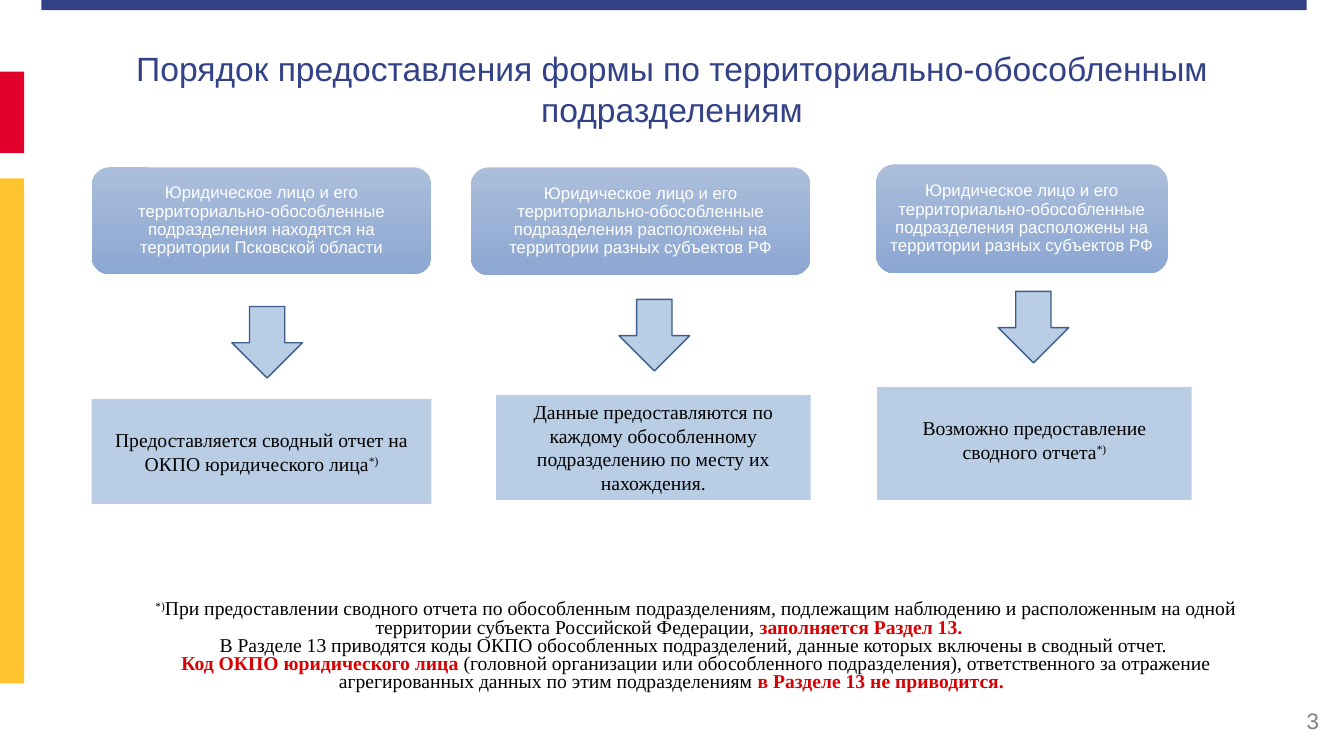
"""Builds the slide on how separate divisions submit the form."""
from dataclasses import dataclass

from pptx import Presentation
from pptx.dml.color import RGBColor
from pptx.enum.shapes import MSO_SHAPE
from pptx.enum.text import MSO_ANCHOR, PP_ALIGN
from pptx.util import Inches, Pt

RECT, ROUND, DOWN = MSO_SHAPE.RECTANGLE, MSO_SHAPE.ROUNDED_RECTANGLE, MSO_SHAPE.DOWN_ARROW
TOP, MIDDLE = MSO_ANCHOR.TOP, MSO_ANCHOR.MIDDLE
CENTER, RIGHT = PP_ALIGN.CENTER, PP_ALIGN.RIGHT


@dataclass(frozen=True)
class Theme:
    """Colours, fonts and type sizes."""
    navy: str = "334286"
    red: str = "E1002B"
    gold: str = "FFC32E"
    pale: str = "B9CDE5"
    edge: str = "3A5F8C"
    light: str = "ABBEDB"
    deep: str = "8CA7D2"
    alert: str = "D70103"
    gray: str = "808080"
    black: str = "000000"
    white: str = "FFFFFF"
    sans: str = "Arial"
    serif: str = "Times New Roman"
    title: int = 24
    page: int = 16
    body: int = 14
    card: int = 12


T = Theme()
TITLE = "Порядок предоставления формы по территориально-обособленным подразделениям"
PAGE = "3"
SPREAD = ("Юридическое лицо и его территориально-обособленные подразделения "
          "расположены на территории разных субъектов РФ")
MARK = ("*)", "mark")
BARS = [
    ((0.41, 0, 12.55, 0.1), T.navy),
    ((0, 0.71, 0.24, 0.81), T.red),
    ((0, 1.77, 0.24, 5.01), T.gold),
]
FLOWS = [
    {"case": "Юридическое лицо и его территориально-обособленные подразделения "
             "находятся на территории Псковской области",
     "card": (0.91, 1.66, 3.37, 1.06), "arrow": (2.3, 3.04), "box": (0.91, 3.96, 3.37, 1.04),
     "rule": [("Предоставляется сводный отчет на ОКПО юридического лица", ""), MARK],
     "inset": 0.29},
    {"case": SPREAD,
     "card": (4.67, 1.66, 3.37, 1.07), "arrow": (6.14, 2.97), "box": (4.92, 3.92, 3.12, 1.04),
     "rule": [("Данные предоставляются по каждому обособленному подразделению "
               "по месту их нахождения.", "")],
     "inset": 0.05},
    {"case": SPREAD,
     "card": (8.69, 1.63, 2.89, 1.08), "arrow": (9.9, 2.89), "box": (8.7, 3.84, 3.12, 1.12),
     "rule": [("Возможно предоставление сводного отчета", ""), MARK],
     "inset": 0.29},
]
NOTES = [
    [MARK,
     ("При предоставлении сводного отчета по обособленным подразделениям, подлежащим "
      "наблюдению и расположенным на одной территории субъекта Российской Федерации, ", ""),
     ("заполняется Раздел 13. ", "alert")],
    [("В Разделе 13 приводятся коды ОКПО обособленных подразделений, данные которых "
      "включены в сводный отчет. ", "")],
    [("Код ОКПО юридического лица ", "alert"),
     ("(головной организации или обособленного подразделения), ответственного за отражение "
      "агрегированных данных по этим подразделениям ", ""),
     ("в Разделе 13 не приводится.", "alert")],
]


def rgb(code):
    return RGBColor.from_string(code)


def shape(slide, kind, at, fill=None, line=None):
    item = slide.shapes.add_shape(kind, *map(Inches, at))
    item.shadow.inherit = False
    if fill:
        item.fill.solid()
        item.fill.fore_color.rgb = rgb(fill)
    if line:
        item.line.color.rgb = rgb(line)
        item.line.width = Pt(1)
    else:
        item.line.fill.background()
    return item


def shade(item):
    item.fill.gradient()
    item.fill.gradient_angle = 270
    for stop, code in zip(item.fill.gradient_stops, (T.light, T.deep)):
        stop.color.rgb = rgb(code)


def write(item, paras, font, size, color, align=CENTER, anchor=TOP,
          inset=(0.1, 0.05, 0.1, 0.05), space=None, indent=0):
    frame = item.text_frame
    frame.word_wrap = True
    frame.vertical_anchor = anchor
    (frame.margin_left, frame.margin_top,
     frame.margin_right, frame.margin_bottom) = map(Inches, inset)
    for i, runs in enumerate(paras):
        para = frame.add_paragraph() if i else frame.paragraphs[0]
        para.alignment = align
        para.line_spacing = space
        if indent:
            para._p.get_or_add_pPr().set("indent", str(Inches(indent)))
        for text, style in runs:
            run = para.add_run()
            run.text = text
            run.font.name = font
            run.font.size = Pt(size)
            run.font.bold = style == "alert"
            run.font.color.rgb = rgb(T.alert if style == "alert" else color)
            if style == "mark":
                run.font._element.set("baseline", "30000")


def label(slide, at, paras, *args, **kw):
    write(slide.shapes.add_textbox(*map(Inches, at)), paras, *args, **kw)


def flow(slide, data):
    card = shape(slide, ROUND, data["card"])
    shade(card)
    write(card, [[(data["case"], "")]], T.sans, T.card, T.white,
          anchor=MIDDLE, inset=(0.05,) * 4, space=0.9)
    shape(slide, DOWN, (*data["arrow"], 0.7, 0.71), T.pale, T.edge)
    box = shape(slide, RECT, data["box"], T.pale)
    write(box, [data["rule"]], T.serif, T.body, T.black,
          inset=(0.1, data["inset"], 0.1, 0.05))


def main():
    deck = Presentation()
    deck.slide_width, deck.slide_height = Inches(13.33), Inches(7.5)
    slide = deck.slides.add_slide(deck.slide_layouts[6])
    for at, color in BARS:
        shape(slide, RECT, at, color)
    label(slide, (0.32, 0.43, 12.69, 1.02), [[(TITLE, "")]], T.sans, T.title, T.navy)
    for data in FLOWS:
        flow(slide, data)
    label(slide, (0.67, 5.92, 11.98, 1.01), NOTES, T.serif, T.body, T.black,
          space=Pt(13), indent=0.49)
    label(slide, (10.18, 6.95, 3, 0.4), [[(PAGE, "")]], T.sans, T.page, T.gray,
          align=RIGHT, anchor=MIDDLE)
    deck.save("out.pptx")


if __name__ == "__main__":
    main()
